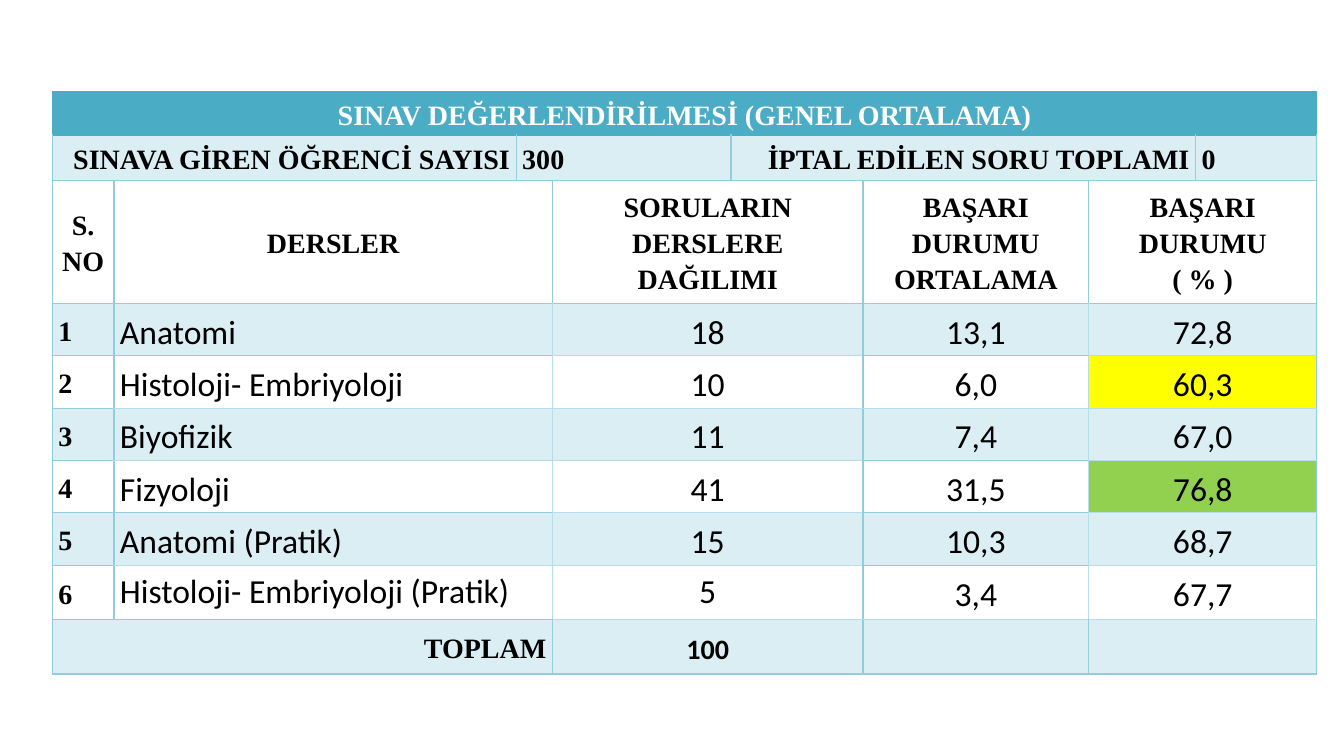
from lxml.etree import SubElement
from pptx import Presentation
from pptx.dml.color import RGBColor
from pptx.enum.text import MSO_ANCHOR, PP_ALIGN
from pptx.oxml.ns import qn
from pptx.util import Inches, Pt

TITLE = "SINAV DEĞERLENDİRİLMESİ (GENEL ORTALAMA)"
SUMMARY = ["SINAVA GİREN ÖĞRENCİ SAYISI", "300", "İPTAL EDİLEN SORU TOPLAMI", "0"]
HEADINGS = ["S.\nNO", "DERSLER", "SORULARIN\nDERSLERE\nDAĞILIMI",
            "BAŞARI\nDURUMU\nORTALAMA", "BAŞARI\nDURUMU\n( % )"]
COURSES = [
    ("Anatomi", "18", "13,1", "72,8"),
    ("Histoloji- Embriyoloji", "10", "6,0", "60,3"),
    ("Biyofizik", "11", "7,4", "67,0"),
    ("Fizyoloji", "41", "31,5", "76,8"),
    ("Anatomi (Pratik)", "15", "10,3", "68,7"),
    ("Histoloji- Embriyoloji (Pratik)", "5", "3,4", "67,7"),
]
TOTALS = ["TOPLAM", "100", "", ""]

COL_WIDTHS = [0.61, 3.99, 0.36, 1.77, 1.31, 2.24, 1.06, 1.2]
ROW_HEIGHTS = [0.43, 0.45, 1.22] + [0.52] * 5 + [0.54] * 2
LEFT, TOP = 0.52, 0.91
SUMMARY_SPANS, COURSE_SPANS, TOTAL_SPANS = (2, 2, 3, 1), (1, 2, 2, 1, 2), (3, 2, 1, 2)

TEAL, EDGE, PALE_EDGE = "4BACC6", "92CDDC", "B7DEE8"
BAND, COURSE_BAND = "DAEEF3", "DBEEF4"
LOWEST, HIGHEST = "FFFF00", "92D050"
BLACK, WHITE = "000000", "FFFFFF"
HEAD_FONT = ("Times New Roman", 20, True)
COURSE_FONT = ("Calibri", 24, False)
TOTAL_FONT = ("Calibri", 20, True)
L, C, R = PP_ALIGN.LEFT, PP_ALIGN.CENTER, PP_ALIGN.RIGHT
# Courses whose lower edge is darker, by column; other columns stay pale
DARK_BELOW = {1: (1, 4), 3: (1, 3, 4, 5)}


def rgb(value):
    return RGBColor.from_string(value)


def set_borders(cell, colors):
    """Colours run left, right, top, bottom."""
    tc_pr = cell._tc.get_or_add_tcPr()
    for side, color in zip("LRTB", colors):
        line = SubElement(tc_pr, qn(f"a:ln{side}"), w=str(Pt(1)))
        SubElement(SubElement(line, qn("a:solidFill")), qn("a:srgbClr"), val=color)


def write(cell, text, font, align, color, spacing):
    cell.vertical_anchor = MSO_ANCHOR.MIDDLE
    cell.margin_left = cell.margin_right = Inches(0.06)
    cell.margin_top = cell.margin_bottom = 0
    p = cell.text_frame.paragraphs[0]
    p.alignment, p.line_spacing = align, spacing
    for i, line in enumerate(text.split("\n") if text else []):
        if i:
            p.add_line_break()
        r = p.add_run()
        r.text = line
        r.font.name, r.font.bold = font[0], font[2]
        r.font.size = Pt(font[1])
        r.font.color.rgb = rgb(color)


def put(table, row, col, span, text, align=C, font=HEAD_FONT, fill=None,
        edges=(EDGE,) * 4, color=BLACK, spacing=1.15):
    """Write one cell that covers span columns."""
    for c in range(col, col + span):
        part = table.cell(row, c)
        set_borders(part, edges)
        if fill:
            part.fill.solid()
            part.fill.fore_color.rgb = rgb(fill)
        else:
            part.fill.background()
    cell = table.cell(row, col)
    if span > 1:
        cell.merge(table.cell(row, col + span - 1))
    write(cell, text, font, align, color, spacing)


def starts(spans):
    return [sum(spans[:i]) for i in range(len(spans))]


def course_edges(number, column):
    """Edges of a course cell: pale inside each pair of columns."""
    def level(n):
        dark = n == 0 or n in DARK_BELOW.get(column, ())
        return EDGE if dark else PALE_EDGE
    sides = (EDGE, PALE_EDGE) if column % 2 else (PALE_EDGE, EDGE)
    return (*sides, level(number - 1), level(number))


def put_course(table, row, number, course):
    band = number % 2 == 1
    scores = [float(c[3].replace(",", ".")) for c in COURSES]
    score = scores[number - 1]
    marks = {min(scores): LOWEST, max(scores): HIGHEST}
    cols = starts(COURSE_SPANS)
    put(table, row, 0, 1, str(number), L, fill=BAND if band else None)
    for column, text in enumerate(course, 1):
        fill = COURSE_BAND if band else None
        if column == 4:
            fill = marks.get(score, fill)
        single = number == len(COURSES) and column < 3
        put(table, row, cols[column], COURSE_SPANS[column], text,
            L if column == 1 else C, COURSE_FONT, fill,
            course_edges(number, column), spacing=1.0 if single else 1.15)


def main():
    prs = Presentation()
    prs.slide_width, prs.slide_height = Inches(13.33), Inches(7.5)
    s = prs.slides.add_slide(prs.slide_layouts[6])
    table = s.shapes.add_table(
        len(ROW_HEIGHTS), len(COL_WIDTHS), Inches(LEFT), Inches(TOP),
        Inches(sum(COL_WIDTHS)), Inches(sum(ROW_HEIGHTS))).table
    table.first_row = table.horz_banding = False
    for column, width in zip(table.columns, COL_WIDTHS):
        column.width = Inches(width)
    for row, height in zip(table.rows, ROW_HEIGHTS):
        row.height = Inches(height)

    put(table, 0, 0, len(COL_WIDTHS), TITLE, fill=TEAL, edges=(TEAL,) * 4, color=WHITE)
    for i, (col, span) in enumerate(zip(starts(SUMMARY_SPANS), SUMMARY_SPANS)):
        put(table, 1, col, span, SUMMARY[i], L if i % 2 else R, fill=BAND,
            edges=(EDGE, EDGE, TEAL, EDGE))
    for col, span, text in zip(starts(COURSE_SPANS), COURSE_SPANS, HEADINGS):
        put(table, 2, col, span, text)
    for number, course in enumerate(COURSES, 1):
        put_course(table, 2 + number, number, course)
    last = len(ROW_HEIGHTS) - 1
    for i, (col, span) in enumerate(zip(starts(TOTAL_SPANS), TOTAL_SPANS)):
        put(table, last, col, span, TOTALS[i], C if i else R,
            TOTAL_FONT if i else HEAD_FONT, BAND,
            (EDGE, EDGE, PALE_EDGE if i else EDGE, EDGE))
    prs.save("out.pptx")


if __name__ == "__main__":
    main()
